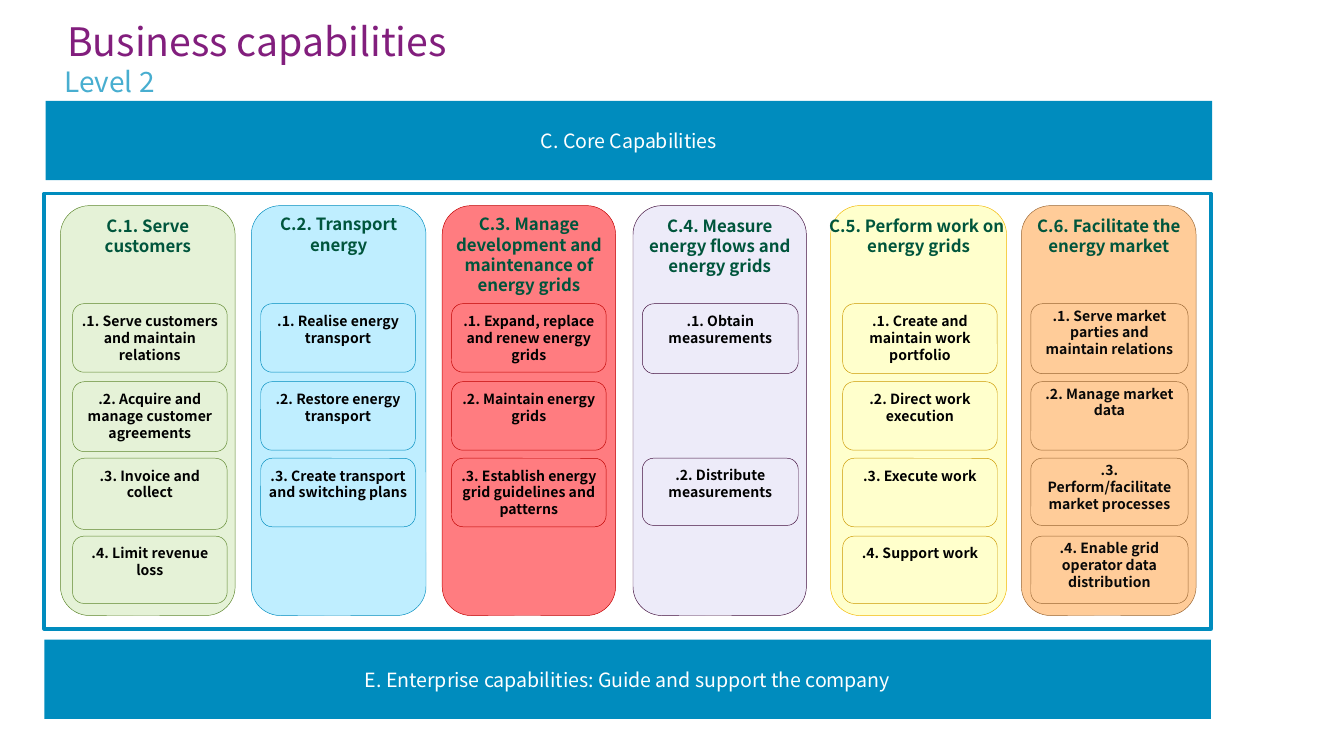
from dataclasses import dataclass

from pptx import Presentation
from pptx.dml.color import RGBColor
from pptx.enum.shapes import MSO_SHAPE
from pptx.enum.text import MSO_ANCHOR, PP_ALIGN
from pptx.util import Inches, Pt

RECT = MSO_SHAPE.RECTANGLE
ROUND = MSO_SHAPE.ROUNDED_RECTANGLE
TOP, MIDDLE = MSO_ANCHOR.TOP, MSO_ANCHOR.MIDDLE
LEFT, CENTER = PP_ALIGN.LEFT, PP_ALIGN.CENTER

FONT = "Noto Sans CJK TC"
COLORS = {
    "white": "FFFFFF", "black": "000000", "ink": "080808",
    "purple": "821E7D", "sky": "48AED0", "blue": "008CBE", "head": "00553C",
    "green": "E5F2D7", "moss": "5E872D", "ice": "BFEEFF",
    "red": "FF7C80", "wine": "C00000", "lilac": "EDEBF9", "plum": "410F3E",
    "yellow": "FFFFCC", "gold": "F2B800", "mustard": "CC9900",
    "orange": "FFCC99", "brown": "996633",
}
WIDE = Inches(10)
HIGH = WIDE * 9 // 16
COL_TOP, COL_HIGH = 1.53, 3.05
ROWS = (2.26, 2.84, 3.41, 3.99)


@dataclass(frozen=True)
class Box:
    left: float
    top: float
    width: float
    height: float


@dataclass(frozen=True)
class Style:
    size: float
    color: str
    bold: bool = False
    align: PP_ALIGN = CENTER
    anchor: MSO_ANCHOR = TOP
    pads: tuple[float, float, float, float] = (0, 0, 0, 0)
    wrap: bool = True
    spacing: float | Pt | None = None


@dataclass(frozen=True)
class Card:
    text: str
    row: int
    height: float = 0.51
    side: float = 0.07


@dataclass(frozen=True)
class Column:
    left: float
    width: float
    inner: float
    span: float
    fill: str
    line: str
    edge: str
    title: tuple[str, ...]
    cards: tuple[Card, ...]
    pad: float = 0.01
    wrap: bool = True
    ink: str = "black"
    solid: bool = True
    drop: float = 0.04


COLUMNS = (
    Column(0.45, 1.3, 0.54, 1.15, "green", "moss", "moss",
           ("C.1. Serve", "customers"), (
               Card(".1. Serve customers and maintain relations", 0, side=0),
               Card(".2. Acquire and manage customer agreements", 1, 0.52),
               Card(".3. Invoice and collect", 2, 0.53),
               Card(".4. Limit revenue loss", 3, 0.5))),
    Column(1.87, 1.3, 1.94, 1.15, "ice", "blue", "blue",
           ("C.2. Transport energy",), (
               Card(".1. Realise energy transport", 0, side=0),
               Card(".2. Restore energy transport", 1, side=0),
               Card(".3. Create transport and switching plans", 2, side=0)),
           pad=0),
    Column(3.29, 1.29, 3.36, 1.15, "red", "wine", "wine",
           ("C.3. Manage development and maintenance of energy grids",), (
               Card(".1. Expand, replace and renew energy grids", 0, side=0),
               Card(".2. Maintain energy grids", 1, side=0),
               Card(".3. Establish energy grid guidelines and patterns", 2, side=0)),
           pad=0),
    Column(4.71, 1.29, 4.78, 1.16, "lilac", "plum", "plum",
           ("C.4. Measure energy flows and energy grids",), (
               Card(".1. Obtain measurements", 0, 0.52, 0),
               Card(".2. Distribute measurements", 2, 0.5, 0))),
    Column(6.18, 1.31, 6.27, 1.15, "yellow", "gold", "mustard",
           ("C.5. Perform work on ", "energy grids"), (
               Card(".1. Create and maintain work portfolio", 0, 0.52, 0.03),
               Card(".2. Direct work execution", 1),
               Card(".3. Execute work", 2),
               Card(".4. Support work", 3, 0.5)),
           wrap=False),
    Column(7.6, 1.3, 7.67, 1.17, "orange", "brown", "brown",
           ("C.6. Facilitate the energy market",), (
               Card(".1. Serve market parties and maintain relations", 0, 0.52),
               Card(".2. Manage market data", 1),
               Card(".3. Perform/facilitate market processes", 2, 0.5),
               Card(".4. Enable grid operator data distribution", 3, 0.5)),
           ink="ink", solid=False, drop=0),
)


def rgb(name: str) -> RGBColor:
    return RGBColor.from_string(COLORS[name])


def place(box: Box) -> tuple[Inches, ...]:
    return tuple(Inches(n) for n in (box.left, box.top, box.width, box.height))


def write(shape, lines: tuple[str, ...], style: Style) -> None:
    """Fill a shape with one paragraph for each line."""
    frame = shape.text_frame
    frame.word_wrap = style.wrap
    frame.vertical_anchor = style.anchor
    (frame.margin_left, frame.margin_top,
     frame.margin_right, frame.margin_bottom) = map(Inches, style.pads)
    for i, line in enumerate(lines):
        para = frame.add_paragraph() if i else frame.paragraphs[0]
        para.alignment = style.align
        if style.spacing is not None:
            para.line_spacing = style.spacing
        run = para.add_run()
        run.text = line
        run.font.name = FONT
        run.font.size = Pt(style.size)
        run.font.bold = style.bold
        run.font.color.rgb = rgb(style.color)


def draw(slide, kind: MSO_SHAPE, box: Box, fill: str | None,
         line: str | None = None, weight: float = 0.25):
    shape = slide.shapes.add_shape(kind, *place(box))
    shape.shadow.inherit = False
    if fill:
        shape.fill.solid()
        shape.fill.fore_color.rgb = rgb(fill)
    else:
        shape.fill.background()
    if line:
        shape.line.color.rgb = rgb(line)
        shape.line.width = Pt(weight)
    else:
        shape.line.fill.background()
    return shape


def label(slide, box: Box, text: str, style: Style) -> None:
    write(slide.shapes.add_textbox(*place(box)), (text,), style)


def banner(slide, box: Box, text: str) -> None:
    style = Style(10.5, "white", anchor=MIDDLE, pads=(0.07, 0.04, 0.07, 0.04))
    write(draw(slide, RECT, box, "blue"), (text,), style)


def column(slide, col: Column) -> None:
    """Draw a capability column, its heading and its cards."""
    back = draw(slide, ROUND, Box(col.left, COL_TOP, col.width, COL_HIGH),
                col.fill, col.line)
    write(back, col.title, Style(9, "head", True, pads=(0, col.pad, 0, 0.04),
                                 wrap=col.wrap))
    for card in col.cards:
        box = Box(col.inner, ROWS[card.row], col.span, card.height)
        shape = draw(slide, ROUND, box, col.fill if col.solid else None, col.edge)
        pads = (card.side, col.drop, card.side, col.drop)
        write(shape, (card.text,), Style(7.5, col.ink, True, pads=pads))


def main() -> None:
    deck = Presentation()
    deck.slide_width, deck.slide_height = WIDE, HIGH
    slide = deck.slides.add_slide(deck.slide_layouts[6])
    label(slide, Box(0.5, 0.09, 7.28, 0.39), "Business capabilities",
          Style(21, "purple", align=LEFT, spacing=Pt(28)))
    label(slide, Box(0.48, 0.43, 7.55, 0.22), "Level 2",
          Style(15, "sky", align=LEFT, spacing=1.2))
    banner(slide, Box(0.34, 0.75, 8.68, 0.59), "C. Core Capabilities")
    banner(slide, Box(0.33, 4.76, 8.68, 0.59),
           "E. Enterprise capabilities: Guide and support the company")
    draw(slide, RECT, Box(0.33, 1.44, 8.68, 3.24), "white", "blue", 2)
    for col in COLUMNS:
        column(slide, col)
    deck.save("out.pptx")


if __name__ == "__main__":
    main()
